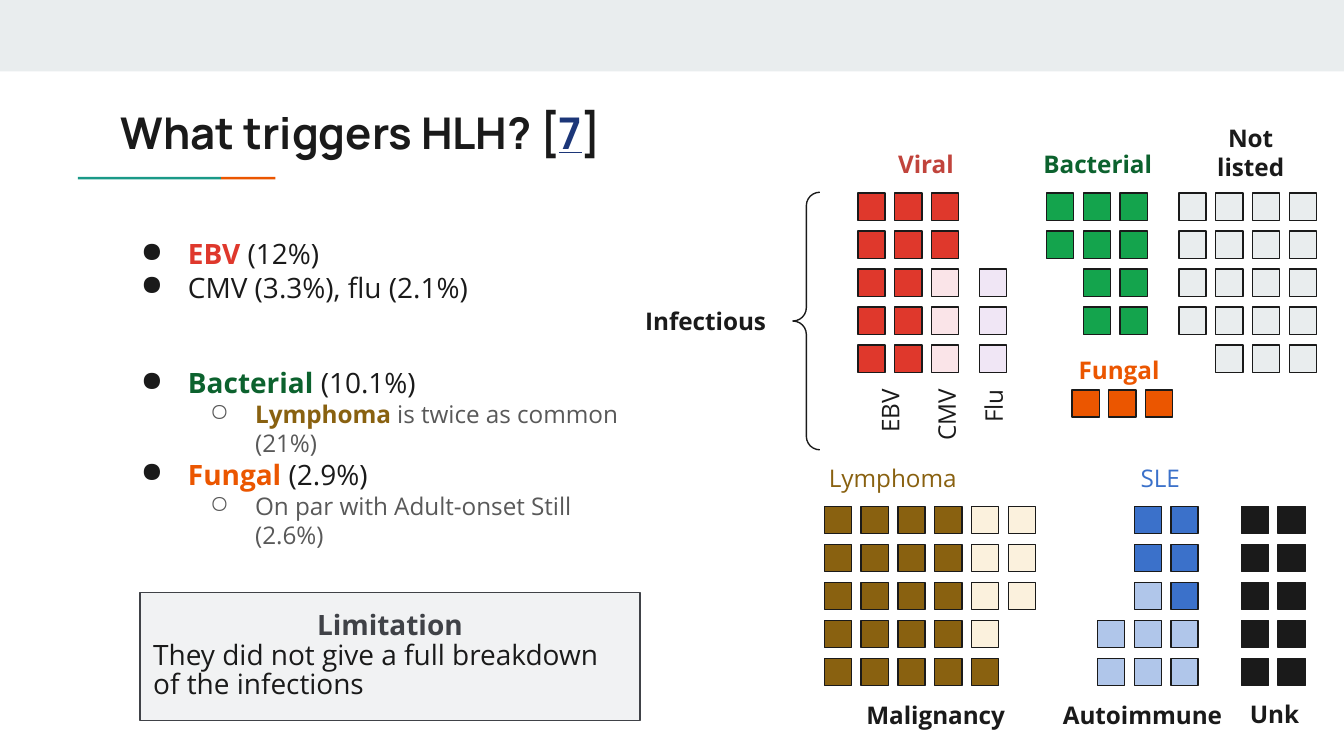
from dataclasses import dataclass

from lxml.etree import SubElement
from pptx import Presentation
from pptx.dml.color import RGBColor
from pptx.enum.shapes import MSO_SHAPE as Shape
from pptx.enum.text import MSO_ANCHOR as Anchor, PP_ALIGN as Align
from pptx.oxml.ns import qn
from pptx.util import Pt

COLORS = {
    "ink": "1A1A1A", "gray": "595959", "slate": "404247", "panel": "F1F2F3",
    "pale": "E9EDEE", "teal": "1A9988", "orange": "EB5600", "link": "1C3678",
    "red": "DF382C", "brick": "C1443C", "rose": "FAE4E8", "lilac": "F0E6F5",
    "green": "14A44D", "forest": "0C622E", "brown": "896110", "cream": "FBF1DD",
    "blue": "3B71CA", "sky": "B0C6EA",
}
CELL_COLORS = {
    "E": "red", "C": "rose", "F": "lilac", "B": "green", "N": "pale", "O": "orange",
    "L": "brown", "M": "cream", "S": "blue", "A": "sky", "U": "ink",
}
CELL, COL_STEP, ROW_STEP = 14.6, 19.7, 20.35
TOP_ROW, LOWER_ROW = 103.5, 271.3


@dataclass
class Run:
    text: str
    color: str = "ink"
    bold: bool = False
    size: float = 15
    font: str = "Open Sans"
    underline: bool = False


@dataclass
class Bullet:
    runs: list[Run]
    level: int = 0
    space_before: float = 0


@dataclass
class CellGrid:
    """Rows of unit squares; each letter picks a colour, a space leaves a gap."""
    left: float
    top: float
    rows: list[str]


@dataclass
class Label:
    text: str
    box: tuple[float, float, float, float]
    color: str = "ink"
    bold: bool = True
    align: Align = Align.CENTER
    rotation: float = 0


TITLE = [
    Run("What triggers HLH? [", bold=True, size=23.4, font="Manrope"),
    Run("7", "link", True, 23.4, "Manrope", True),
    Run("]", bold=True, size=23.4, font="Manrope"),
]
BULLETS = [
    Bullet([Run("EBV ", "red", True), Run("(12%)")]),
    Bullet([Run("CMV (3.3%), flu (2.1%)")]),
    Bullet([Run("Bacterial ", "forest", True), Run("(10.1%)")], space_before=33),
    Bullet([Run("Lymphoma ", "brown", True, 13),
            Run("is twice as common (21%)", "gray", size=13)], level=1),
    Bullet([Run("Fungal ", "orange", True), Run("(2.9%)")]),
    Bullet([Run("On par with Adult-onset Still (2.6%)", "gray", size=13)], level=1),
]
GRIDS = [
    CellGrid(459.6, TOP_ROW, ["EEE", "EEE", "EEC", "EEC", "EEC"]),
    CellGrid(524.7, TOP_ROW + 2 * ROW_STEP, ["F"] * 3),
    CellGrid(560.6, TOP_ROW, ["BBB", "BBB", " BB", " BB"]),
    CellGrid(631.6, TOP_ROW, ["NNNN"] * 4 + [" NNN"]),
    CellGrid(574.3, 208.9, ["OOO"]),
    CellGrid(441.6, LOWER_ROW, ["LLLLMM"] * 3 + ["LLLLM", "LLLLL"]),
    CellGrid(587.9, LOWER_ROW, [" SS", " SS", " AS", "AAA", "AAA"]),
    CellGrid(665, LOWER_ROW, ["UU"] * 5),
]
LABELS = [
    Label("Lymphoma", (437, 241, 84.5, 30), "brown", False, Align.LEFT),
    Label("SLE", (604, 241, 47.5, 30), "blue", False, Align.LEFT),
    Label("Malignancy", (441.5, 368, 119.5, 30)),
    Label("Autoimmune", (561, 368, 102, 30)),
    Label("Unk", (659, 367.5, 47.5, 30)),
    Label("Viral", (459.5, 73, 73, 30), "brick"),
    Label("Bacterial", (551.5, 73, 73, 30), "forest"),
    Label("Not listed", (631.5, 59, 77, 46)),
    Label("Fungal", (563, 183, 73, 30), "orange"),
    Label("Infectious", (331, 157, 94, 30)),
    *[Label(text, (left, 208, 43.2, 30), bold=False, align=Align.RIGHT, rotation=270)
      for text, left in (("EBV", 455), ("CMV", 485.3), ("Flu", 510.5))],
]


def rgb(name: str) -> RGBColor:
    return RGBColor.from_string(COLORS[name])


def add_box(slide, box, fill=None, line=None, kind=Shape.RECTANGLE):
    sp = slide.shapes.add_shape(kind, *map(Pt, box))
    sp.shadow.inherit = False
    if fill:
        sp.fill.solid()
        sp.fill.fore_color.rgb = rgb(fill)
    else:
        sp.fill.background()
    if line:
        sp.line.color.rgb = rgb(line)
        sp.line.width = Pt(0.75)
    else:
        sp.line.fill.background()
    return sp


def set_frame(sp, anchor):
    tf = sp.text_frame
    values = {"word_wrap": True, "vertical_anchor": anchor}
    values |= {f"margin_{side}": Pt(7.2) for side in ("left", "top", "right", "bottom")}
    for name, value in values.items():
        setattr(tf, name, value)
    return tf


def add_text(slide, box, anchor=Anchor.TOP):
    return set_frame(slide.shapes.add_textbox(*map(Pt, box)), anchor)


def add_runs(p, runs: list[Run]) -> None:
    for run in runs:
        r = p.add_run()
        r.text = run.text
        values = {"name": run.font, "size": Pt(run.size), "bold": run.bold,
                  "underline": run.underline}
        for name, value in values.items():
            setattr(r.font, name, value)
        r.font.color.rgb = rgb(run.color)


def add_bullet(p, bullet: Bullet) -> None:
    char, color, margin, indent = (("●", "ink", 36, -25.2), ("○", "gray", 72, -24.2))[bullet.level]
    pPr = p._p.get_or_add_pPr()
    pPr.set("marL", str(Pt(margin)))
    pPr.set("indent", str(Pt(indent)))
    SubElement(SubElement(pPr, qn("a:buClr")), qn("a:srgbClr")).set("val", COLORS[color])
    SubElement(pPr, qn("a:buChar")).set("char", char)
    p.level = bullet.level
    if bullet.space_before:
        p.space_before = Pt(bullet.space_before)
    add_runs(p, bullet.runs)


def add_grid(slide, grid: CellGrid) -> None:
    for i, row in enumerate(grid.rows):
        for j, key in enumerate(row):
            if key != " ":
                box = (grid.left + j * COL_STEP, grid.top + i * ROW_STEP, CELL, CELL)
                add_box(slide, box, CELL_COLORS[key], "ink")


def add_label(slide, label: Label) -> None:
    sp = slide.shapes.add_textbox(*map(Pt, label.box))
    sp.rotation = label.rotation
    p = set_frame(sp, Anchor.TOP).paragraphs[0]
    p.alignment = label.align
    add_runs(p, [Run(label.text, label.color, label.bold, 13)])


def add_limitation(slide) -> None:
    sp = add_box(slide, (75, 317.3, 267.8, 68.6), "panel", "slate")
    tf = set_frame(sp, Anchor.MIDDLE)
    lines = [
        (Align.CENTER, Run("Limitation", "slate", True)),
        (Align.LEFT, Run("They did not give a full breakdown of the infections")),
    ]
    for i, (align, run) in enumerate(lines):
        p = tf.add_paragraph() if i else tf.paragraphs[0]
        p.alignment = align
        p.line_spacing = 0.88
        add_runs(p, [run])


def main() -> None:
    prs = Presentation()
    prs.slide_width, prs.slide_height = Pt(720), Pt(405)
    s = prs.slides.add_slide(prs.slide_layouts[6])

    add_box(s, (0, 0, 720, 38.3), "pale")
    add_box(s, (118.4, 94.8, 29.2, 1.4), "orange")
    add_box(s, (41.8, 94.8, 76.6, 1.4), "teal")
    add_runs(add_text(s, (57.6, 49.7, 605.5, 42.5), Anchor.MIDDLE).paragraphs[0], TITLE)

    tf = add_text(s, (57.6, 109.4, 282.2, 202.3), Anchor.MIDDLE)
    for i, bullet in enumerate(BULLETS):
        add_bullet(tf.add_paragraph() if i else tf.paragraphs[0], bullet)

    for grid in GRIDS:
        add_grid(s, grid)
    for label in LABELS:
        add_label(s, label)
    brace = add_box(s, (424.8, 103, 14.4, 138), line="ink", kind=Shape.LEFT_BRACE)
    brace.adjustments[0] = brace.adjustments[1] = 0.5
    add_limitation(s)
    prs.save("out.pptx")


if __name__ == "__main__":
    main()
